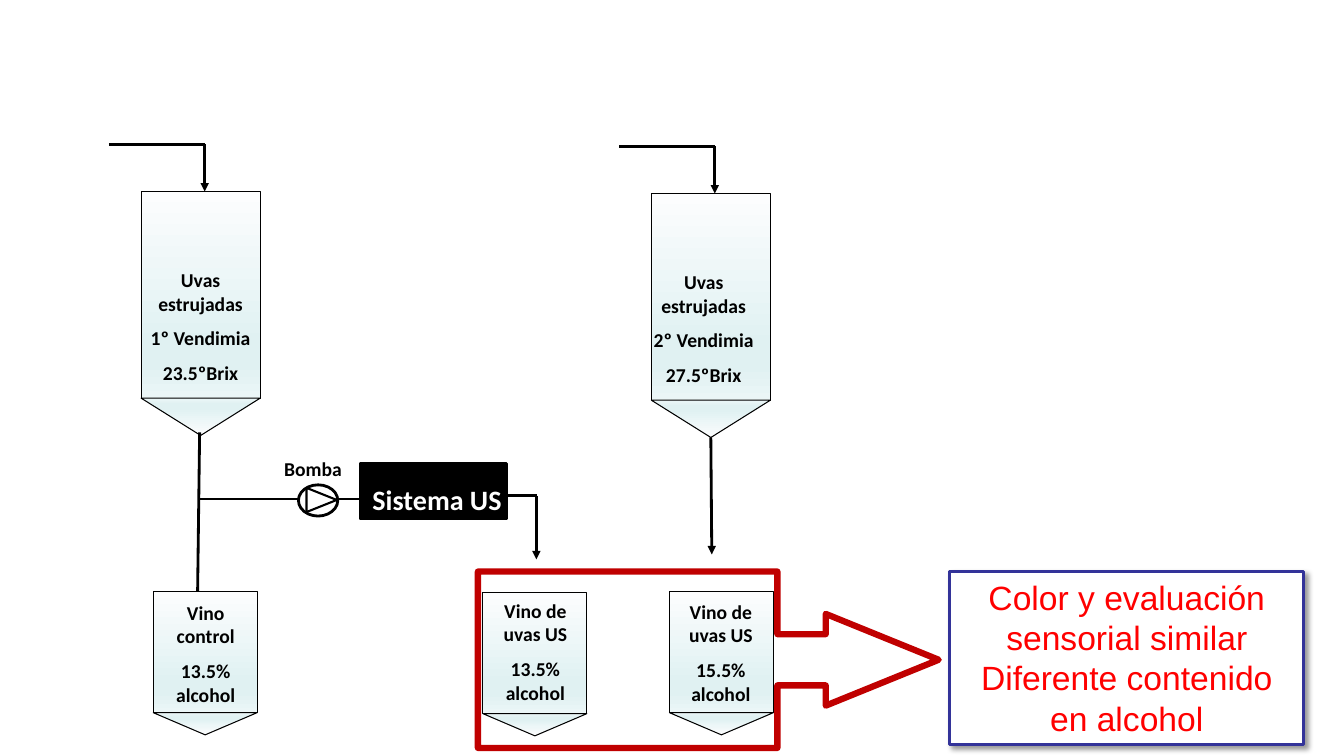
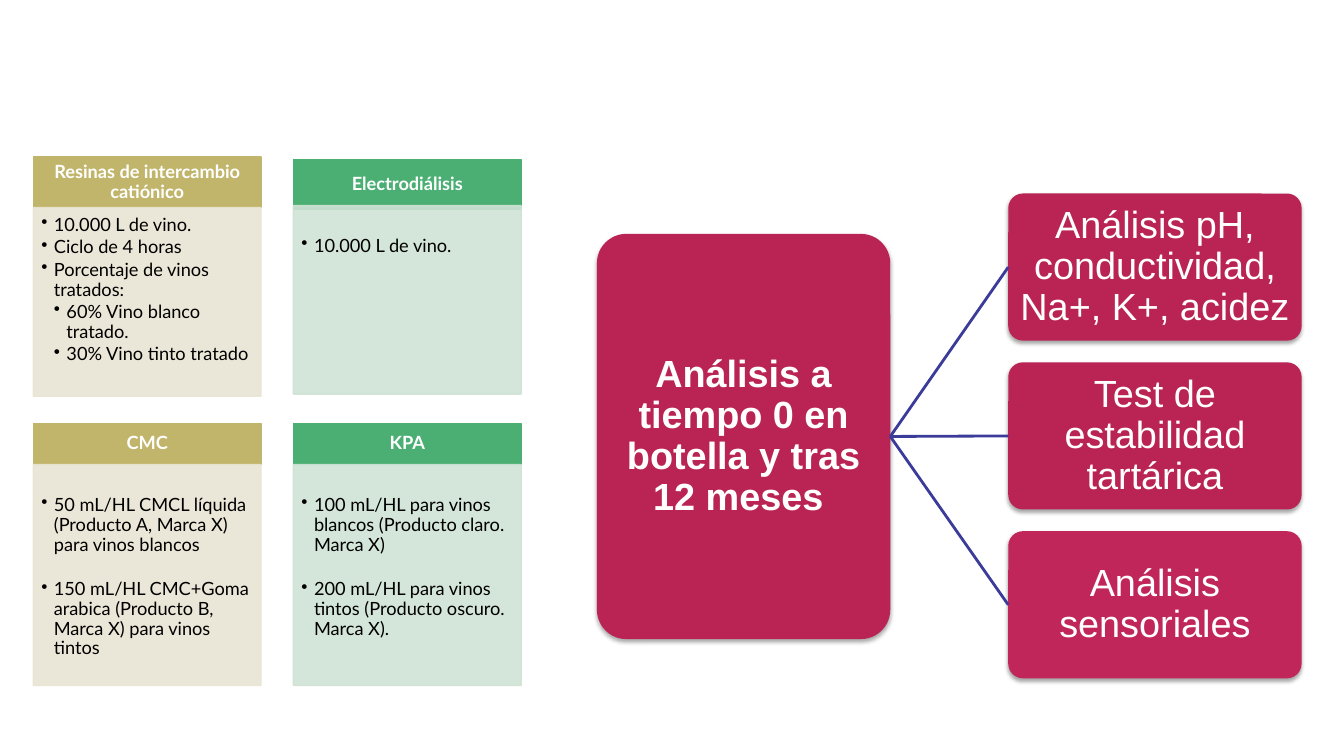
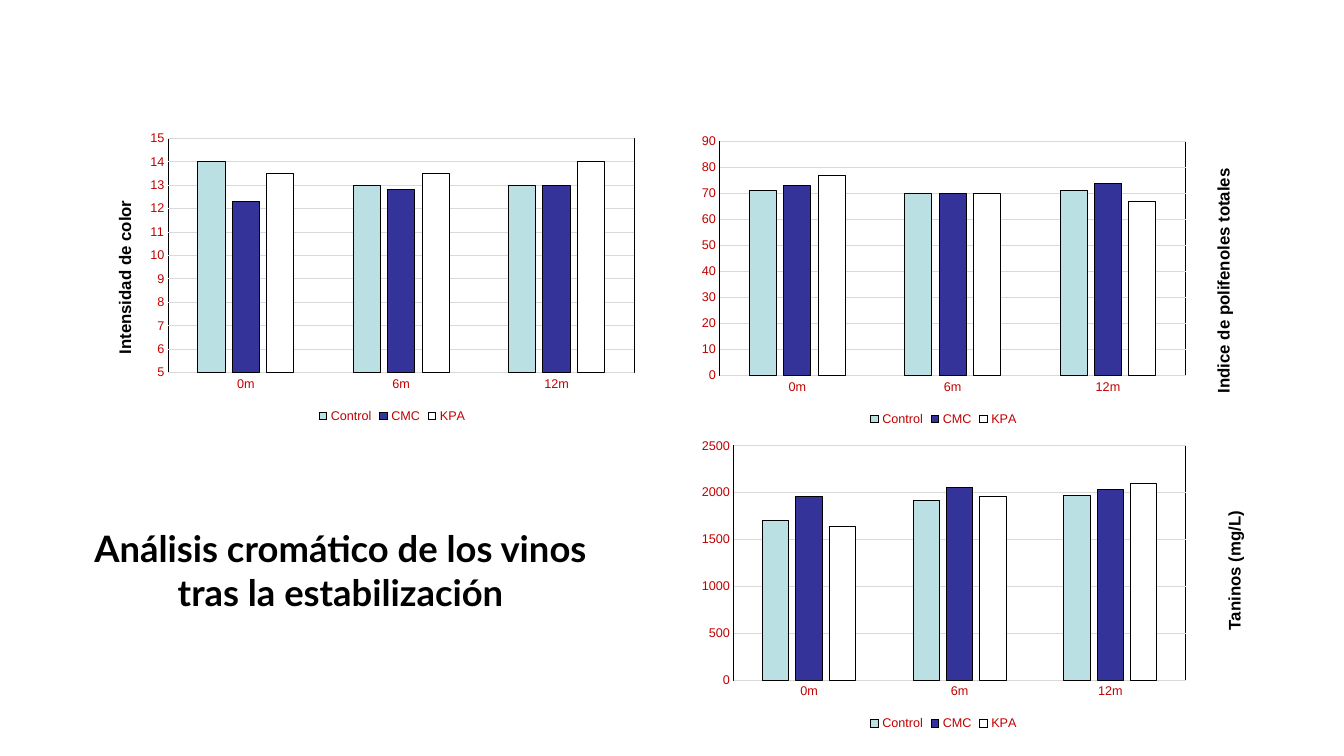
from lxml import etree
from pptx import Presentation
from pptx.chart.data import CategoryChartData
from pptx.dml.color import RGBColor
from pptx.enum import chart as charts, shapes, text
from pptx.oxml import ns
from pptx.util import Inches, Pt

BLACK = RGBColor(0x00, 0x00, 0x00)
WHITE = RGBColor(0xFF, 0xFF, 0xFF)
RED = RGBColor(0xFF, 0x00, 0x00)
DARK_RED = RGBColor(0xC0, 0x00, 0x00)
NAVY = RGBColor(0x33, 0x33, 0x99)
LINK_BLUE = RGBColor(0x3B, 0x3B, 0x9A)
PALE_AQUA = RGBColor(0xBB, 0xE0, 0xE3)
GRID_GREY = RGBColor(0xD9, 0xD9, 0xD9)
CRIMSON = RGBColor(0xB9, 0x24, 0x54)
LIGHT_CRIMSON = RGBColor(0xC1, 0x26, 0x5A)
OLIVE = RGBColor(0xC1, 0xB5, 0x6B)
SAND = RGBColor(0xE9, 0xE5, 0xD4)
GREEN = RGBColor(0x4B, 0xAF, 0x73)
MINT = RGBColor(0xD0, 0xE3, 0xD5)
TANK_STOPS = ((0, "FCFDFE"), (74, "E0F1F2"), (83, "E0F1F2"), (100, "EBF6F7"))

SHAPE = shapes.MSO_SHAPE
CENTER = text.PP_ALIGN.CENTER
MIDDLE = text.MSO_ANCHOR.MIDDLE
LABEL = {"name": "Calibri", "size": Pt(14), "bold": True, "color": BLACK}
HEADER = {"name": "Lato", "size": Pt(13), "bold": True, "color": WHITE}
BODY = {"name": "Lato", "size": Pt(13), "color": BLACK}
NODE = {"name": "Arial", "size": Pt(27), "color": WHITE}
AXIS_TITLE = {"name": "Arial", "size": Pt(12), "bold": True, "color": BLACK}
CHART_TEXT = {"name": "Arial", "size": Pt(9), "color": DARK_RED}
STACKED = {"alignment": CENTER, "space_before": Pt(8)}
TIGHT = {"alignment": CENTER, "line_spacing": 0.9}


def add_xml(parent, tag, **attributes):
    return etree.SubElement(parent, ns.qn(tag), attributes)


def set_font(font, style):
    for name, value in style.items():
        if name == "color":
            font.color.rgb = value
        else:
            setattr(font, name, value)


def set_frame(shape, insets=(0.1, 0.05, 0.1, 0.05), anchor=text.MSO_ANCHOR.TOP, wrap=True):
    frame = shape.text_frame
    frame.word_wrap = wrap
    frame.vertical_anchor = anchor
    for side, inset in zip(("left", "top", "right", "bottom"), insets):
        setattr(frame, "margin_" + side, Inches(inset))


def write(shape, lines, style, layout=None, bullets=None):
    """Write one paragraph per line; bullets gives the level of each line."""
    frame = shape.text_frame
    for index, line in enumerate(lines):
        para = frame.paragraphs[0] if index == 0 else frame.add_paragraph()
        if bullets:
            para.level = bullets[index]
            properties = para._p.get_or_add_pPr()
            properties.set("marL", str(Inches(0.125 * (bullets[index] + 1))))
            properties.set("indent", str(Inches(-0.125)))
            add_xml(properties, "a:buChar", char="•")
        for name, value in (layout or {}).items():
            if index or name != "space_before":
                setattr(para, name, value)
        span = para.add_run()
        span.text = line
        set_font(span.font, style)


def add_text(slide, at, lines, style, layout=None, wrap=True, rotation=0):
    box = slide.shapes.add_textbox(*map(Inches, at))
    box.rotation = rotation
    set_frame(box, wrap=wrap)
    write(box, lines, style, layout)
    return box


def add_shape(slide, kind, at, fill=None, line=None, weight=0.75, rotation=0):
    shape = slide.shapes.add_shape(kind, *map(Inches, at))
    shape.shadow.inherit = False
    shape.rotation = rotation
    if fill is None:
        shape.fill.background()
    else:
        shape.fill.solid()
        shape.fill.fore_color.rgb = fill
    if line is None:
        shape.line.fill.background()
    else:
        shape.line.color.rgb = line
        shape.line.width = Pt(weight)
    return shape


def add_shadow(shape, alpha, blur, distance, angle):
    effects = shape._element.spPr.find(ns.qn("a:effectLst"))
    shadow = add_xml(effects, "a:outerShdw", blurRad=str(Pt(blur)), dist=str(Pt(distance)),
                     dir=str(angle * 60000), algn="ctr", rotWithShape="0")
    color = add_xml(shadow, "a:srgbClr", val="000000")
    add_xml(color, "a:alpha", val=str(alpha * 1000))


def add_line(slide, start, end, color=BLACK, arrow=False):
    line = slide.shapes.add_connector(shapes.MSO_CONNECTOR.STRAIGHT, *map(Inches, start + end))
    line.line.color.rgb = color
    line.line.width = Pt(2)
    if arrow:
        add_xml(line.line._get_or_add_ln(), "a:tailEnd", type="triangle")
    add_xml(line._element.spPr, "a:effectLst")
    return line


def add_tank(slide, left, top, width, body, tip):
    """Draw a tank with a conical bottom."""
    for kind, y, height, rotation in ((SHAPE.RECTANGLE, top, body, 0),
                                      (SHAPE.ISOSCELES_TRIANGLE, top + body, tip, 180)):
        part = add_shape(slide, kind, (left, y, width, height), WHITE, BLACK, rotation=rotation)
        part.fill.gradient()
        part.fill.gradient_angle = 270
        stops = part._element.spPr.find(ns.qn("a:gradFill")).find(ns.qn("a:gsLst"))
        for stop in list(stops):
            stops.remove(stop)
        for position, color in TANK_STOPS:
            stop = add_xml(stops, "a:gs", pos=str(position * 1000))
            add_xml(stop, "a:srgbClr", val=color)


def add_harvest(slide, left, top, label_left, lines):
    """Draw a tank of crushed grapes with its feed pipe."""
    add_tank(slide, left, top, 1.18, 2.05, 0.37)
    bend = left + 0.63
    add_line(slide, (bend, top - 0.47), (bend, top), arrow=True)
    add_line(slide, (bend - 0.95, top - 0.47), (bend, top - 0.47))
    add_text(slide, (label_left, top + 0.71, 1.34, 1.28), lines, LABEL, STACKED)


def add_wine(slide, left, top, label, lines):
    add_tank(slide, left, top, 1.03, 1.2, 0.22)
    add_text(slide, label, lines, LABEL, STACKED)


def build_process(slide):
    add_harvest(slide, 1.4, 1.9, 1.32, ("Uvas estrujadas", "1º Vendimia", "23.5ºBrix"))
    add_harvest(slide, 6.46, 1.92, 6.31, ("Uvas estrujadas", "2º Vendimia", "27.5ºBrix"))

    add_line(slide, (1.98, 4.95), (2.96, 4.95))
    add_shape(slide, SHAPE.OVAL, (2.96, 4.81, 0.39, 0.31), line=BLACK, weight=2)
    add_shape(slide, SHAPE.ISOSCELES_TRIANGLE, (3.07, 4.81, 0.24, 0.3), line=BLACK,
              weight=1.5, rotation=90)
    add_text(slide, (2.72, 4.48, 1.18, 0.34), ["Bomba"], LABEL)
    add_line(slide, (1.96, 5.87), (1.98, 4.29))
    add_line(slide, (3.36, 4.95), (3.57, 4.95))
    add_line(slide, (5.02, 4.92), (5.33, 4.92))
    add_line(slide, (5.32, 4.92), (5.32, 5.55), arrow=True)
    add_line(slide, (7.05, 4.34), (7.06, 5.5), arrow=True)
    system = add_shape(slide, SHAPE.RECTANGLE, (3.57, 4.6, 1.45, 0.55), BLACK, BLACK, 2)
    set_frame(system, (0.08, 0, 0, 0.03), text.MSO_ANCHOR.BOTTOM)
    write(system, ["Sistema US"], {**LABEL, "size": Pt(20), "color": WHITE},
          {"alignment": CENTER})

    add_wine(slide, 1.52, 5.87, (1.53, 5.91, 1.02, 1.17), ("Vino control", "13.5% alcohol"))
    add_wine(slide, 4.79, 5.88, (4.74, 5.89, 1.14, 1.17), ("Vino de uvas US", "13.5% alcohol"))
    add_wine(slide, 6.64, 5.87, (6.58, 5.9, 1.14, 1.17), ("Vino de uvas US", "15.5% alcohol"))

    callout = add_shape(slide, SHAPE.DOWN_ARROW_CALLOUT, (6.15, 4.26, 1.75, 4.57),
                        line=DARK_RED, weight=4.5, rotation=270)
    for index, value in enumerate((0.29, 0.26, 0.64, 0.65)):
        callout.adjustments[index] = value
    result = add_shape(slide, SHAPE.RECTANGLE, (9.42, 5.67, 3.51, 1.72), WHITE, NAVY, 2)
    add_shadow(result, 40, 4, 3, 45)
    set_frame(result)
    write(result, ("Color y evaluación sensorial similar", "Diferente contenido en alcohol"),
          {"name": "Arial", "size": Pt(24), "color": RED}, {"alignment": CENTER})


def add_node(slide, at, line, fill=CRIMSON, bold=False, inset=0.06):
    node = add_shape(slide, SHAPE.ROUNDED_RECTANGLE, at, fill)
    node.adjustments[0] = 0.1
    add_shadow(node, 35, 3.1, 1.8, 90)
    set_frame(node, (inset,) * 4, MIDDLE)
    write(node, [line], {**NODE, "bold": bold}, TIGHT)
    return node


def add_card(slide, at, header_height, body_top, body_height, colors, title, lines,
             bullets, top_inset=0.31, gap=18):
    """Draw a titled card; at is the left and top of its header."""
    left, top = at
    header_color, body_color = colors
    header = add_shape(slide, SHAPE.RECTANGLE, (left, top, 2.26, header_height),
                       header_color, header_color, 1)
    set_frame(header, (0.1, 0.06, 0.1, 0.06), MIDDLE)
    write(header, [title], HEADER, TIGHT)
    body = add_shape(slide, SHAPE.RECTANGLE, (left, body_top, 2.26, body_height),
                     body_color, body_color, 1)
    for color in body._element.spPr.iter(ns.qn("a:srgbClr")):
        add_xml(color, "a:alpha", val="90000")
    set_frame(body, (0.08, top_inset, 0.1, 0.11))
    write(body, lines, BODY, {"alignment": text.PP_ALIGN.LEFT, "line_spacing": 0.9,
                              "space_before": Pt(gap)}, bullets)


def build_treatments(slide):
    root = add_node(slide, (5.92, 2.32, 2.91, 4.02),
                    "Análisis a tiempo 0 en botella y tras 12 meses ", bold=True, inset=0.1)
    tests = (("Análisis pH, conductividad, Na+, K+, acidez", CRIMSON),
             ("Test de estabilidad tartárica", CRIMSON),
             ("Análisis sensoriales", LIGHT_CRIMSON))
    for index, (line, fill) in enumerate(tests):
        test = add_node(slide, (10, 1.92 + 1.675 * index, 2.91, 1.46), line, fill)
        link = add_line(slide, (8.83, 4.33), (10, 2.65 + 1.675 * index), LINK_BLUE)
        link.begin_connect(root, 3)
        link.end_connect(test, 1)

    olive, green = (OLIVE, SAND), (GREEN, MINT)
    add_card(slide, (0.33, 1.56), 0.5, 2.06, 1.87, olive, "Resinas de intercambio catiónico",
             ("10.000 L de vino.", "Ciclo de 4 horas", "Porcentaje de vinos tratados:",
              "60% Vino blanco tratado.", "30% Vino tinto tratado"),
             (0, 0, 0, 1, 1), top_inset=0.08, gap=2)
    add_card(slide, (2.91, 1.58), 0.5, 2.04, 1.87, green, "Electrodiálisis",
             ["10.000 L de vino."], [0])
    add_card(slide, (0.33, 4.2), 0.41, 4.61, 2.19, olive, "CMC",
             ("50 mL/HL CMCL líquida (Producto A, Marca X) para vinos blancos",
              "150 mL/HL CMC+Goma arabica (Producto B, Marca X) para vinos tintos"), (0, 0))
    add_card(slide, (2.91, 4.2), 0.41, 4.61, 2.19, green, "KPA",
             ("100 mL/HL para vinos blancos (Producto claro. Marca X)",
              "200 mL/HL para vinos tintos (Producto oscuro. Marca X)."), (0, 0))


def add_columns(slide, left, top, scale, values):
    """Add a column chart; scale is the minimum, maximum and step of its value axis."""
    data = CategoryChartData()
    data.categories = ("0m", "6m", "12m")
    for name, row in zip(("Control", "CMC", "KPA"), values):
        data.add_series(name, row)
    chart = slide.shapes.add_chart(charts.XL_CHART_TYPE.COLUMN_CLUSTERED, Inches(left),
                                   Inches(top), Inches(5), Inches(3), data).chart
    set_font(chart.font, CHART_TEXT)
    chart.has_title = False
    chart.has_legend = True
    chart.legend.position = charts.XL_LEGEND_POSITION.BOTTOM
    chart.legend.include_in_layout = False
    set_font(chart.legend.font, CHART_TEXT)

    for axis in (chart.category_axis, chart.value_axis):
        axis.major_tick_mark = charts.XL_TICK_MARK.NONE
        axis.minor_tick_mark = charts.XL_TICK_MARK.NONE
        set_font(axis.tick_labels.font, CHART_TEXT)
    values_axis = chart.value_axis
    values_axis.minimum_scale, values_axis.maximum_scale, values_axis.major_unit = scale
    values_axis.format.line.fill.background()
    for line in (chart.category_axis.format.line, values_axis.major_gridlines.format.line):
        line.color.rgb = GRID_GREY
        line.width = Pt(0.75)

    plot = chart.plots[0]
    plot.vary_by_categories = False
    plot.gap_width = 219
    plot.overlap = -27
    for series, color in zip(plot.series, (PALE_AQUA, NAVY, WHITE)):
        series.format.fill.solid()
        series.format.fill.fore_color.rgb = color
        series.format.line.color.rgb = BLACK
        series.format.line.width = Pt(0.75)

    frame = add_xml(chart._chartSpace.chart.plotArea, "c:spPr")
    add_xml(frame, "a:noFill")
    border = add_xml(add_xml(frame, "a:ln", w=str(Pt(0.75))), "a:solidFill")
    add_xml(border, "a:srgbClr", val=str(BLACK))


def build_results(slide):
    add_text(slide, (0.67, 5.17, 5.42, 0.98),
             ["Análisis cromático de los vinos tras la estabilización"],
             {**HEADER, "size": Pt(26), "color": BLACK}, {"alignment": CENTER})
    add_columns(slide, 6.86, 1.27, (0, 90, 10), ((71, 70, 71), (73, 70, 74), (77, 70, 67)))
    add_columns(slide, 1.39, 1.24, (5, 15, 1),
                ((14, 13, 13), (12.3, 12.8, 13), (13.5, 13.5, 14)))
    add_columns(slide, 6.86, 4.29, (0, 2500, 500),
                ((1700, 1920, 1970), (1960, 2060, 2030), (1640, 1960, 2100)))
    for at, title in (((0.36, 2.59, 1.75, 0.3), "Intensidad de color"),
                      ((10.87, 2.59, 2.52, 0.3), "Indice de polifenoles totales"),
                      ((11.54, 5.5, 1.4, 0.3), "Taninos (mg/L)")):
        add_text(slide, at, [title], AXIS_TITLE, wrap=False, rotation=270)


def main():
    deck = Presentation()
    deck.slide_width, deck.slide_height = Inches(13.33), Inches(7.5)
    for build in (build_process, build_treatments, build_results):
        build(deck.slides.add_slide(deck.slide_layouts[6]))
    deck.save("out.pptx")


if __name__ == "__main__":
    main()
